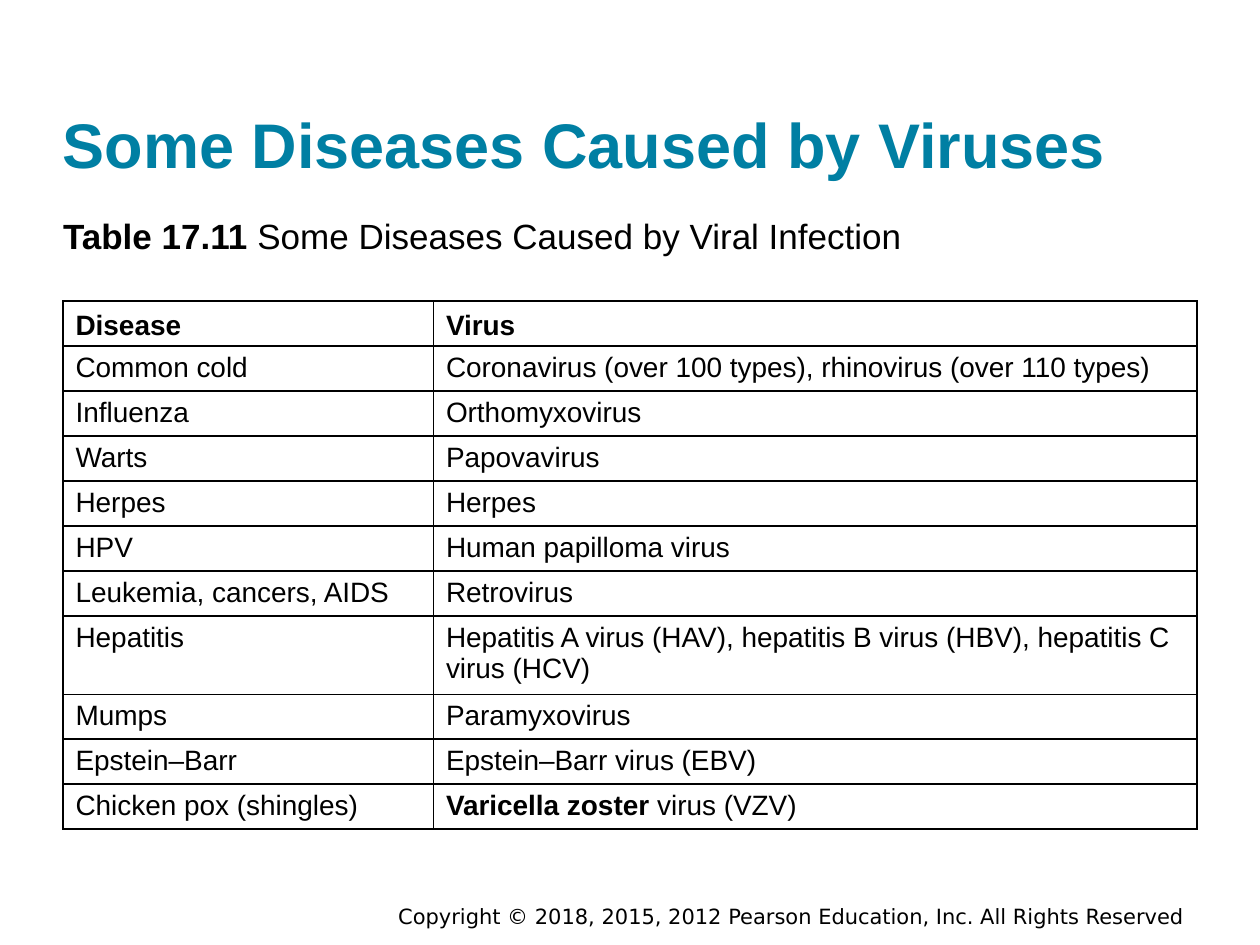
from lxml import etree
from pptx import Presentation
from pptx.dml.color import RGBColor
from pptx.enum.text import MSO_ANCHOR as Anchor, PP_ALIGN as Align
from pptx.oxml.ns import qn
from pptx.util import Inches, Pt

BLACK, TEAL = "000000", "007FA3"
HEADERS = ("Disease", "Virus")
DISEASES = [
    ("Common cold", "Coronavirus (over 100 types), rhinovirus (over 110 types)"),
    ("Influenza", "Orthomyxovirus"),
    ("Warts", "Papovavirus"),
    ("Herpes", "Herpes"),
    ("HPV", "Human papilloma virus"),
    ("Leukemia, cancers, AIDS", "Retrovirus"),
    ("Hepatitis", "Hepatitis A virus (HAV), hepatitis B virus (HBV), hepatitis C virus (HCV)"),
    ("Mumps", "Paramyxovirus"),
    ("Epstein–Barr", "Epstein–Barr virus (EBV)"),
    ("Chicken pox (shingles)", [("Varicella zoster", True), (" virus (VZV)", False)]),
]


def rgb(color):
    """Turn a hex string into a colour."""
    return RGBColor.from_string(color)


def write(tf, text, size=16, font="Arial", color=BLACK, bold=False, align=Align.LEFT):
    """Write a string, or (text, bold) pairs, into the first paragraph."""
    tf.word_wrap = True
    p = tf.paragraphs[0]
    p.alignment = align
    for part, is_bold in [(text, bold)] if isinstance(text, str) else text:
        r = p.add_run()
        r.text = part
        r.font.size, r.font.name, r.font.bold = Pt(size), font, is_bold
        r.font.color.rgb = rgb(color)


def add_text(s, box, text, anchor=Anchor.TOP, inset=True, **fmt):
    """Add a text box at the given left, top, width and height."""
    tf = s.shapes.add_textbox(*map(Inches, box)).text_frame
    tf.vertical_anchor = anchor
    if not inset:
        tf.margin_left = tf.margin_right = tf.margin_top = tf.margin_bottom = 0
    write(tf, text, **fmt)


def add_borders(cell, color=BLACK, width=1):
    """Draw all four borders of a cell ahead of its fill."""
    pr = cell._tc.get_or_add_tcPr()
    for i, side in enumerate(("lnL", "lnR", "lnT", "lnB")):
        ln = etree.Element(qn(f"a:{side}"), w=str(Pt(width)))
        fill = etree.SubElement(ln, qn("a:solidFill"))
        etree.SubElement(fill, qn("a:srgbClr"), val=color)
        pr.insert(i, ln)


def add_disease_table(s, left, top, width):
    """Add the table of diseases and viruses."""
    rows = [HEADERS, *DISEASES]
    heights = [0.6 if row[0] == "Hepatitis" else 0.35 for row in rows]
    box = map(Inches, (left, top, width, sum(heights)))
    table = s.shapes.add_table(len(rows), len(HEADERS), *box).table
    table.horz_banding = False
    table.columns[0].width = Inches(2.94)
    table.columns[1].width = Inches(width - 2.94)
    for i, (row, height) in enumerate(zip(rows, heights)):
        table.rows[i].height = Inches(height)
        for j, text in enumerate(row):
            cell = table.cell(i, j)
            cell.fill.background()
            cell.margin_top, cell.margin_bottom = Inches(0.05), Inches(0.04)
            cell.vertical_anchor = Anchor.TOP if i else Anchor.BOTTOM
            add_borders(cell)
            write(cell.text_frame, text, bold=i == 0)


def build_slide(prs):
    """Place the title, caption, table and footer."""
    s = prs.slides.add_slide(prs.slide_layouts[6])
    add_text(s, (2.9, 7.04, 6.6, 0.46),
             "Copyright © 2018, 2015, 2012 Pearson Education, Inc. All Rights Reserved",
             anchor=Anchor.MIDDLE, size=12, font="DejaVu Sans", align=Align.RIGHT)
    add_text(s, (0.5, 0.24, 9, 1.2), "Some Diseases Caused by Viruses",
             anchor=Anchor.BOTTOM, inset=False, size=36, color=TEAL, bold=True)
    add_text(s, (0.5, 1.7, 7.22, 0.42),
             [("Table 17.11", True), (" Some Diseases Caused by Viral Infection", False)],
             inset=False, size=20)
    add_disease_table(s, 0.5, 2.39, 9)


def main():
    """Build and save the presentation."""
    prs = Presentation()
    prs.slide_width, prs.slide_height = Inches(10), Inches(7.5)
    build_slide(prs)
    prs.save("out.pptx")


if __name__ == "__main__":
    main()
